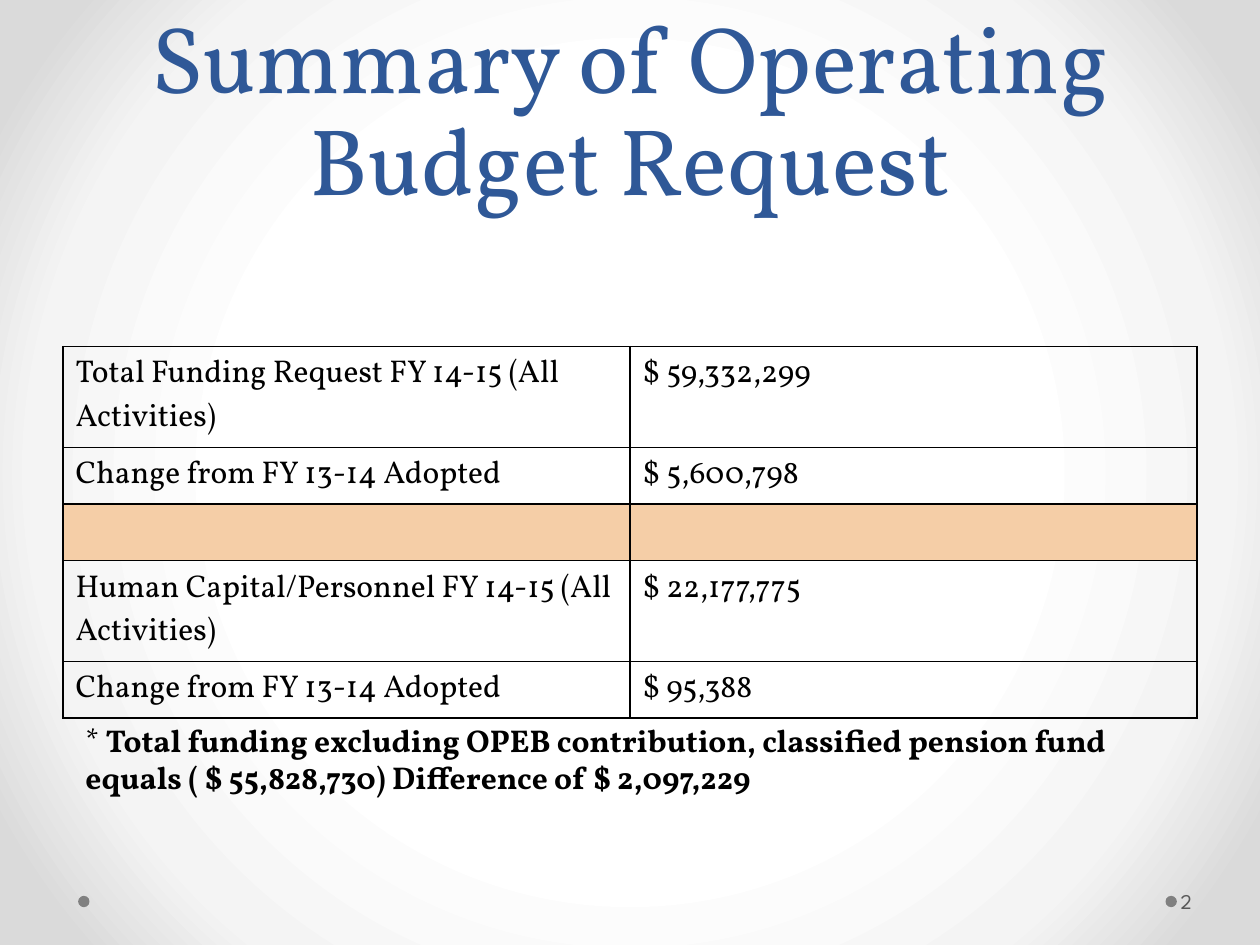
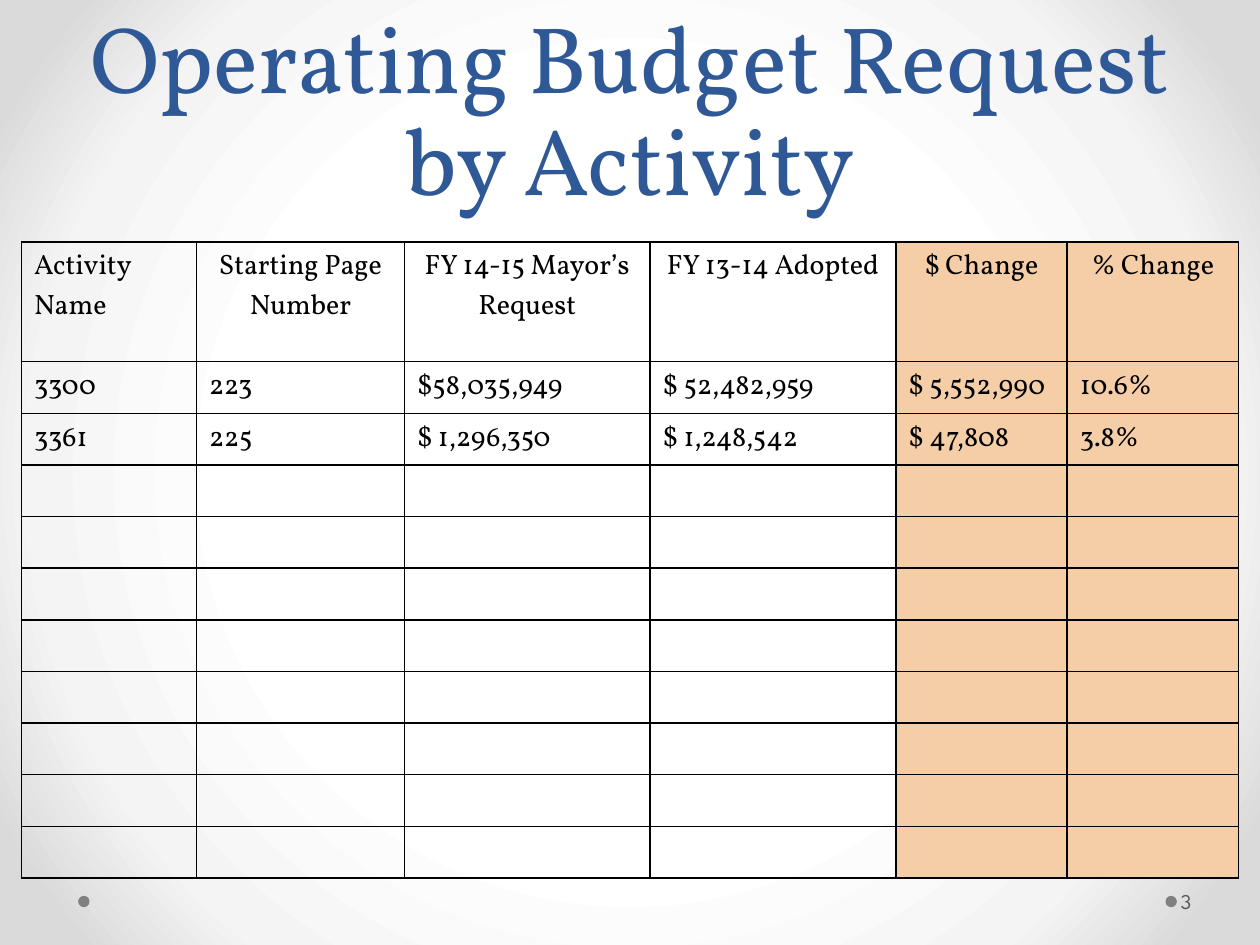
import pptx
import pptx.dml.color
import pptx.enum.dml
import pptx.enum.shapes
import pptx.enum.text
import pptx.oxml
import pptx.oxml.ns
import pptx.util
from pptx.util import Inches

COLORS = {
    "title": "2F5897",
    "text": "000000",
    "border": "000000",
    "highlight": "F5CEA7",
    "dot": "808080",
    "page_number": "595959",
}
BACKGROUND_STOPS = [(50, "FFFFFF"), (76, "F4F4F4"), (92, "DADADA")]
SERIF = "Vollkorn"
SANS = "League Spartan"
CENTER = pptx.enum.text.PP_ALIGN.CENTER
LEFT = pptx.enum.text.PP_ALIGN.LEFT

SUMMARY_ROWS = [
    ["Total Funding Request FY 14-15 (All Activities)", "$ 59,332,299"],
    ["Change from FY 13-14 Adopted", "$ 5,600,798"],
    ["", ""],
    ["Human Capital/Personnel FY 14-15 (All Activities)", "$ 22,177,775"],
    ["Change from FY 13-14 Adopted", "$ 95,388"],
]
ACTIVITY_HEADER = ["Activity Name", "Starting Page Number", "FY 14-15 Mayor’s Request",
                   "FY 13-14 Adopted", "$ Change", "% Change"]
ACTIVITY_ROWS = [
    ["3300", "223", "$58,035,949", "$ 52,482,959", "$ 5,552,990", "10.6%"],
    ["3361", "225", "$ 1,296,350", "$ 1,248,542", "$ 47,808", "3.8%"],
]
EMPTY_ACTIVITY_COUNT = 8


def rgb(name):
    return pptx.dml.color.RGBColor.from_string(COLORS[name])


def add_run(paragraph, text, size, color="text", font=SERIF, bold=False):
    run = paragraph.add_run()
    run.text = text
    run.font.size = pptx.util.Pt(size)
    run.font.name = font
    run.font.bold = bold
    run.font.color.rgb = rgb(color)


def set_background(master):
    stops = "".join(f'<a:gs pos="{position * 1000}"><a:srgbClr val="{color}"/></a:gs>'
                    for position, color in BACKGROUND_STOPS)
    namespaces = pptx.oxml.ns.nsdecls("p", "a")
    background = pptx.oxml.parse_xml(
        f'<p:bg {namespaces}><p:bgPr><a:gradFill rotWithShape="1"><a:gsLst>{stops}</a:gsLst>'
        '<a:path path="circle"><a:fillToRect l="50000" t="50000" r="50000" b="50000"/></a:path>'
        '</a:gradFill><a:effectLst/></p:bgPr></p:bg>')
    common_data = master.element.find(pptx.oxml.ns.qn("p:cSld"))
    existing = common_data.find(pptx.oxml.ns.qn("p:bg"))
    if existing is not None:
        common_data.remove(existing)
    common_data.insert(0, background)


def add_dot(slide, left):
    dot = slide.shapes.add_shape(pptx.enum.shapes.MSO_SHAPE.OVAL, Inches(left),
                                 Inches(7.11), Inches(0.09), Inches(0.09))
    dot.shadow.inherit = False
    dot.fill.solid()
    dot.fill.fore_color.rgb = rgb("dot")
    dot.line.fill.background()


def set_title(slide, text):
    title = slide.shapes.title
    title.left, title.top = Inches(0.5), Inches(0)
    title.width, title.height = Inches(9), Inches(1.75)
    frame = title.text_frame
    frame.word_wrap = True
    frame.auto_size = pptx.enum.text.MSO_AUTO_SIZE.NONE
    frame.vertical_anchor = pptx.enum.text.MSO_ANCHOR.BOTTOM
    paragraph = frame.paragraphs[0]
    paragraph.alignment = CENTER
    paragraph.line_spacing = pptx.util.Pt(58)
    add_run(paragraph, text, 54, "title")


def add_text_box(slide, left, top, width, height):
    box = slide.shapes.add_textbox(Inches(left), Inches(top), Inches(width), Inches(height))
    box.text_frame.word_wrap = True
    return box.text_frame


def add_page_number(slide, number):
    frame = add_text_box(slide, 9.34, 6.95, 0.61, 0.4)
    frame.margin_left = Inches(0.03)
    frame.margin_right = Inches(0.05)
    frame.vertical_anchor = pptx.enum.text.MSO_ANCHOR.MIDDLE
    add_run(frame.paragraphs[0], str(number), 12, "page_number", SANS)


def add_slide(presentation, title, number):
    slide = presentation.slides.add_slide(presentation.slide_layouts[5])
    for left in (9.25, 0.62):
        add_dot(slide, left)
    set_title(slide, title)
    add_page_number(slide, number)
    return slide


def set_borders(cell):
    properties = cell._tc.get_or_add_tcPr()
    for index, side in enumerate(("lnL", "lnR", "lnT", "lnB")):
        properties.insert(index, pptx.oxml.parse_xml(
            f'<a:{side} {pptx.oxml.ns.nsdecls("a")} w="12700"><a:solidFill>'
            f'<a:srgbClr val="{COLORS["border"]}"/></a:solidFill></a:{side}>'))


def format_cell(cell, text, size, alignment, highlighted):
    if highlighted:
        cell.fill.solid()
        cell.fill.fore_color.rgb = rgb("highlight")
    else:
        cell.fill.background()
    set_borders(cell)
    paragraph = cell.text_frame.paragraphs[0]
    paragraph.alignment = alignment
    if text:
        add_run(paragraph, text, size)


def add_table(slide, left, top, widths, heights, rows, size, is_highlighted, is_centered):
    table = slide.shapes.add_table(len(rows), len(widths), Inches(left), Inches(top),
                                   Inches(sum(widths)), Inches(sum(heights))).table
    table.first_row = False
    table.horz_banding = False
    for column, width in zip(table.columns, widths):
        column.width = Inches(width)
    for row, height in zip(table.rows, heights):
        row.height = Inches(height)
    for row_index, texts in enumerate(rows):
        for column_index, text in enumerate(texts):
            alignment = CENTER if is_centered(row_index, column_index) else LEFT
            format_cell(table.cell(row_index, column_index), text, size, alignment,
                        is_highlighted(row_index, column_index))


def add_footnote(slide):
    paragraph = add_text_box(slide, 0.58, 5.67, 9.08, 0.71).paragraphs[0]
    add_run(paragraph, "* ", 18)
    add_run(paragraph, "Total funding excluding OPEB contribution, classified pension fund "
            "equals ( $ 55,828,730) Difference of $ 2,097,229", 18, bold=True)


def build_summary_slide(presentation):
    slide = add_slide(presentation, "Summary of Operating Budget Request", 2)
    add_table(slide, 0.5, 2.75, [4.5, 4.5], [0.8, 0.45, 0.45, 0.8, 0.45], SUMMARY_ROWS, 18,
              is_highlighted=lambda row, column: row == 2,
              is_centered=lambda row, column: False)
    add_footnote(slide)


def build_activity_slide(presentation):
    slide = add_slide(presentation, "Operating Budget Request by Activity", 3)
    empty_rows = [[""] * len(ACTIVITY_HEADER)] * EMPTY_ACTIVITY_COUNT
    rows = [ACTIVITY_HEADER] + ACTIVITY_ROWS + empty_rows
    add_table(slide, 0.17, 1.92, [1.39, 1.65, 1.95, 1.95, 1.36, 1.36],
              [0.95] + [0.41] * (len(rows) - 1), rows, 16,
              is_highlighted=lambda row, column: column >= 4,
              is_centered=lambda row, column: row == 0 and column > 0)


def main():
    presentation = pptx.Presentation()
    presentation.slide_width = Inches(10)
    presentation.slide_height = Inches(7.5)
    set_background(presentation.slide_master)
    build_summary_slide(presentation)
    build_activity_slide(presentation)
    presentation.save("out.pptx")


if __name__ == "__main__":
    main()
